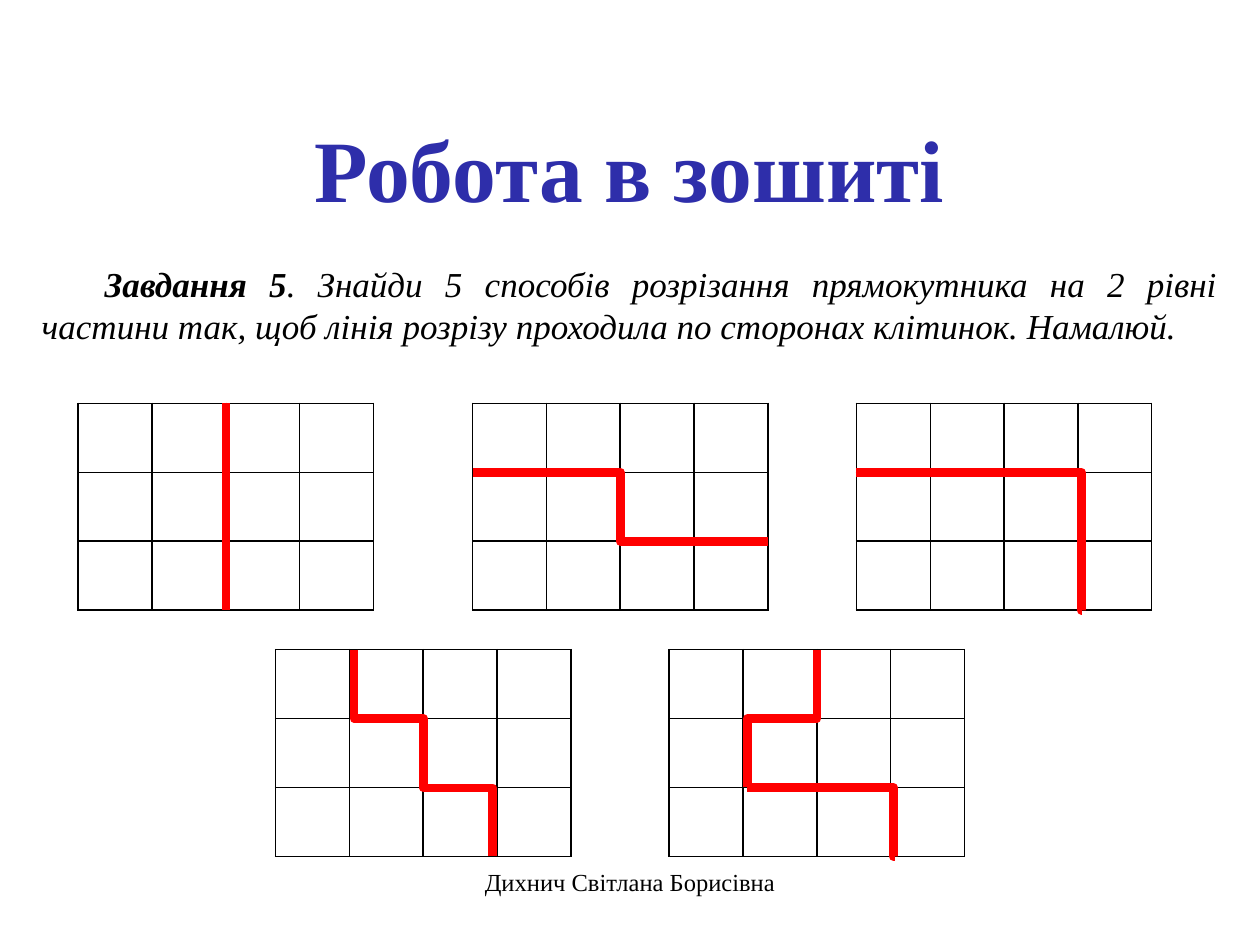
from lxml.etree import SubElement
from pptx import Presentation
from pptx.dml.color import RGBColor
from pptx.enum.shapes import MSO_CONNECTOR
from pptx.enum.text import MSO_ANCHOR, PP_ALIGN
from pptx.oxml.ns import qn
from pptx.util import Pt

BLUE = RGBColor(0x2E, 0x2E, 0xAA)
BLACK = RGBColor(0, 0, 0)
RED = RGBColor(0xFF, 0, 0)

# Content
TITLE = "Робота в зошиті"
TASK_LABEL = "Завдання 5"
TASK = (". Знайди 5 способів розрізання прямокутника на 2 рівні частини так, "
        "щоб лінія розрізу проходила по сторонах клітинок. Намалюй.")
AUTHOR = "Дихнич Світлана Борисівна"

# Each cut: start and end in cells, position of the bend (None is straight),
# and whether the line leaves its start vertically
GRIDS = [
    {"at": (44.7, 230.5), "cuts": [((2, 0), (2, 3), None, True)]},
    {"at": (270, 230.5), "cuts": [((0, 1), (4, 2), 0.5, False)]},
    {"at": (489.4, 230.5), "cuts": [((0, 1), (3.06, 3), 0.995, False)]},
    {"at": (157.5, 371.2), "cuts": [((2, 2), (2.94, 3), 0.007, True),
                                    ((1.06, 0), (2, 2), 0.5, True)]},
    {"at": (382.4, 371.2), "cuts": [((2, 0), (1.06, 2), 0.5, True),
                                    ((1.06, 2), (3.06, 3), 0.988, False)]},
]
COLUMNS, ROWS = 4, 3
CELL_WIDTH, CELL_HEIGHT = 42.2, 39.4


def place(shape, left, top, width, height, anchor):
    shape.left, shape.top, shape.width, shape.height = map(Pt, (left, top, width, height))
    shape.text_frame.word_wrap = True
    shape.text_frame.vertical_anchor = anchor


def write(paragraph, text, color, **formats):
    run = paragraph.add_run()
    run.text = text
    run.font.color.rgb = color
    for name, value in {"name": "Times New Roman", **formats}.items():
        setattr(run.font, name, value)


def add_grid(slide, left, top):
    frame = slide.shapes.add_table(ROWS, COLUMNS, Pt(left), Pt(top),
                                   Pt(COLUMNS * CELL_WIDTH), Pt(ROWS * CELL_HEIGHT))
    table = frame.table
    table.first_row = table.horz_banding = False
    for cell in table.iter_cells():
        properties = cell._tc.get_or_add_tcPr()
        for side in ("a:lnL", "a:lnR", "a:lnT", "a:lnB"):
            line = SubElement(properties, qn(side), w=str(Pt(1)))
            fill = SubElement(line, qn("a:solidFill"))
            SubElement(fill, qn("a:srgbClr"), val=str(BLACK))
        cell.fill.background()


def add_cut(slide, left, top, start, end, bend, vertical):
    x1, x2 = (left + point[0] * CELL_WIDTH for point in (start, end))
    y1, y2 = (top + point[1] * CELL_HEIGHT for point in (start, end))
    turned = vertical and bend is not None
    box = (x1, y1, x2, y2)
    if turned:
        # A vertical start is a horizontal elbow turned about its centre
        center_x, center_y = (x1 + x2) / 2, (y1 + y2) / 2
        half_width, half_height = abs(y2 - y1) / 2, abs(x2 - x1) / 2
        box = (center_x - half_width, center_y - half_height,
               center_x + half_width, center_y + half_height)
    kind = MSO_CONNECTOR.STRAIGHT if bend is None else MSO_CONNECTOR.ELBOW
    connector = slide.shapes.add_connector(kind, *map(Pt, box))
    connector.line.color.rgb = RED
    connector.line.width = Pt(5)
    properties = connector._element.spPr
    SubElement(properties, qn("a:effectLst"))
    if turned:
        transform = properties.find(qn("a:xfrm"))
        transform.set("rot", "16200000" if x2 > x1 else "5400000")
        if x2 > x1:
            transform.set("flipH", "1")
    if bend is not None:
        adjustments = properties.find(qn("a:prstGeom")).find(qn("a:avLst"))
        SubElement(adjustments, qn("a:gd"), name="adj1", fmla=f"val {round(bend * 100000)}")


presentation = Presentation()
presentation.slide_width, presentation.slide_height = Pt(720), Pt(540)
slide = presentation.slides.add_slide(presentation.slide_layouts[1])

# Title
title, body = slide.placeholders
place(title, 31, 62, 657.4, 67.7, MSO_ANCHOR.MIDDLE)
paragraph = title.text_frame.paragraphs[0]
paragraph.alignment = PP_ALIGN.CENTER
write(paragraph, TITLE, BLUE, size=Pt(50), bold=True)

# Task
place(body, 16.6, 146.2, 686.2, 80, MSO_ANCHOR.TOP)
paragraph = body.text_frame.paragraphs[0]
properties = paragraph._p.get_or_add_pPr()
properties.set("marL", "0")
properties.set("indent", str(Pt(36)))
SubElement(properties, qn("a:buNone"))
paragraph.alignment = PP_ALIGN.JUSTIFY
paragraph.space_before = Pt(0)
write(paragraph, TASK_LABEL, BLACK, size=Pt(20), bold=True, italic=True)
write(paragraph, TASK, BLACK, size=Pt(20), bold=False, italic=True)

# Grids, then the cuts on top of them
for grid in GRIDS:
    add_grid(slide, *grid["at"])
for grid in GRIDS:
    for cut in grid["cuts"]:
        add_cut(slide, *grid["at"], *cut)

# Author
author = slide.shapes.add_textbox(0, 0, 0, 0)
place(author, 246, 492, 228, 37.5, MSO_ANCHOR.TOP)
paragraph = author.text_frame.paragraphs[0]
paragraph.alignment = PP_ALIGN.CENTER
write(paragraph, AUTHOR, BLACK, size=Pt(14))

presentation.save("out.pptx")
